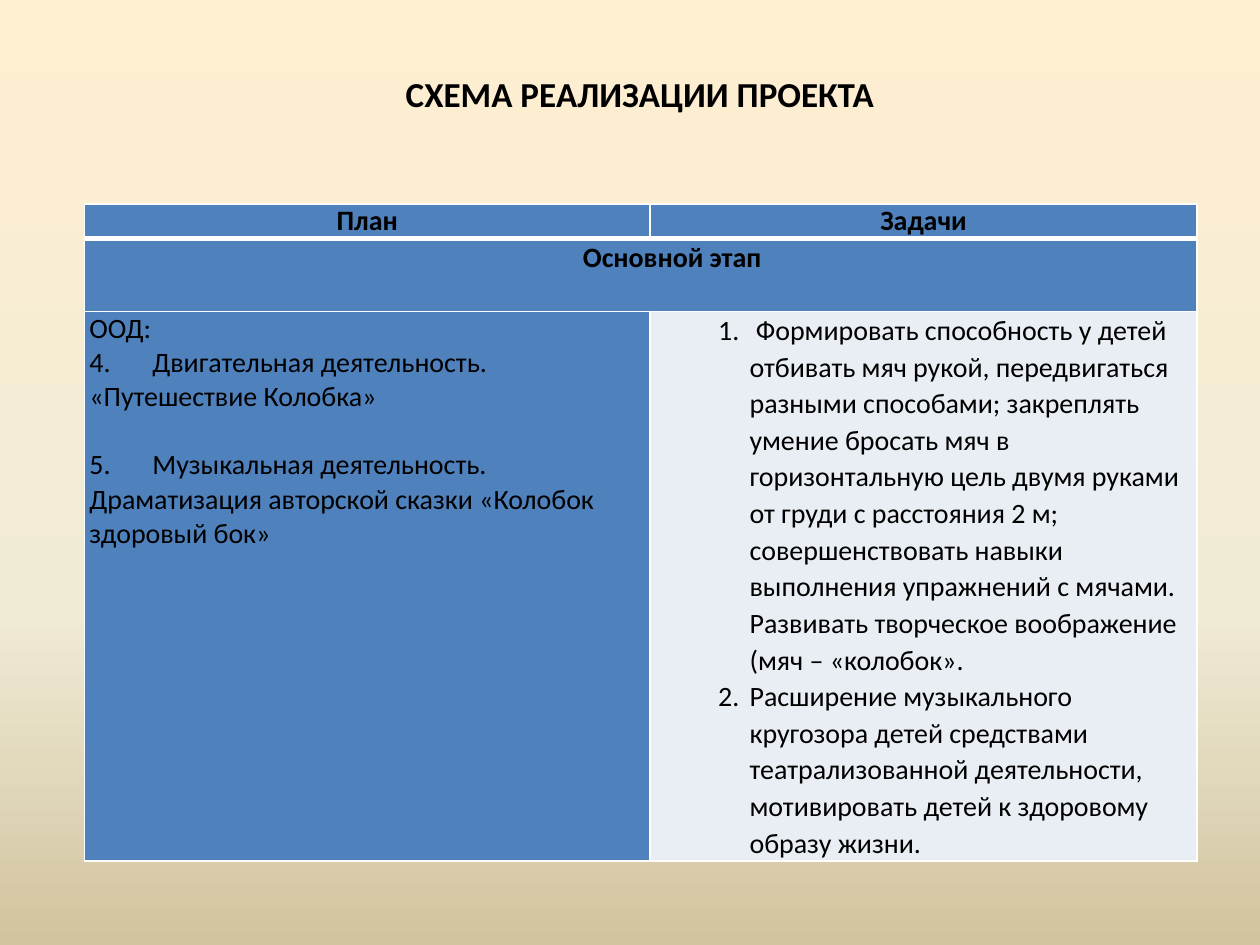
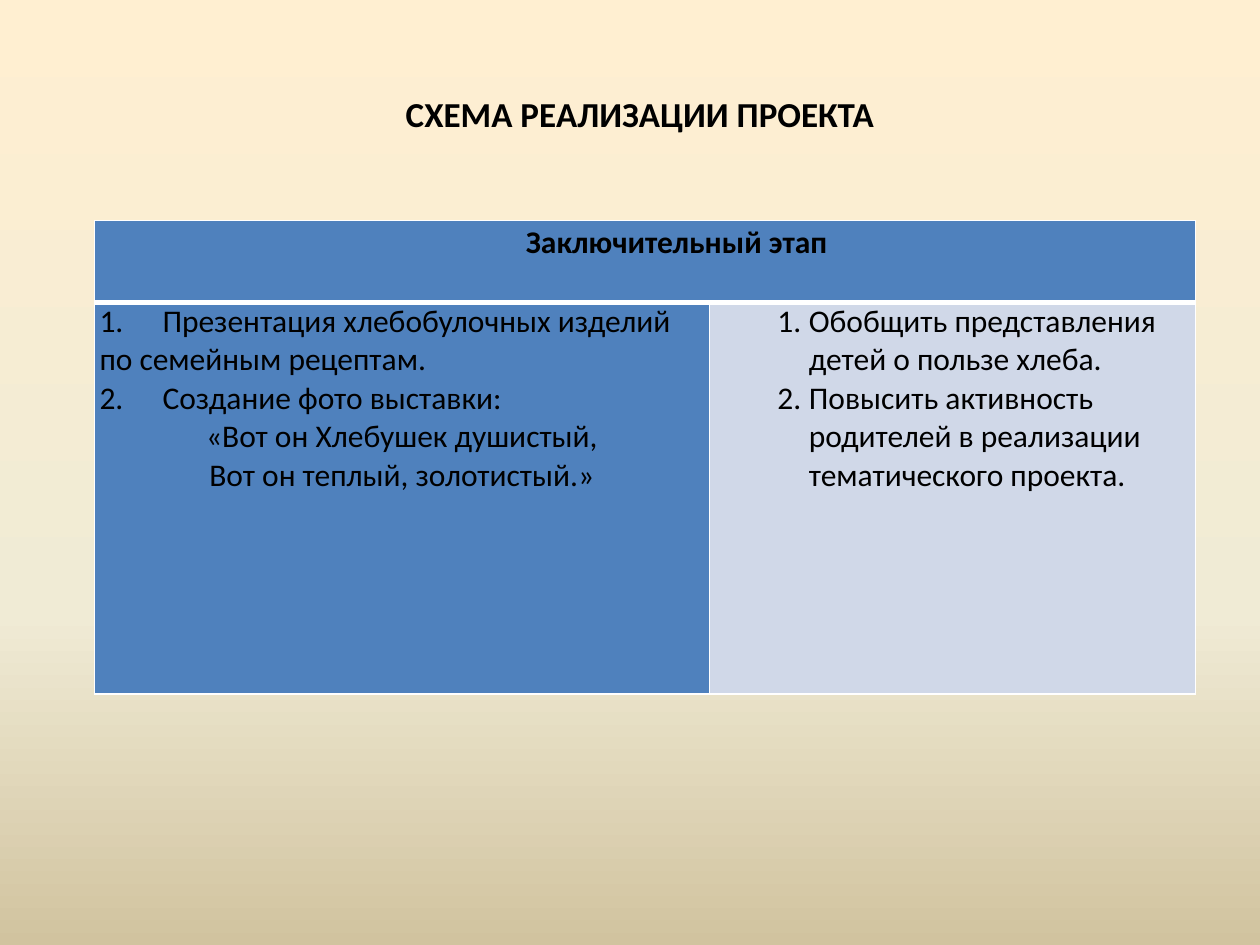
from dataclasses import dataclass

from lxml.etree import SubElement
from pptx import Presentation
from pptx.dml.color import RGBColor as RGB
from pptx.enum.text import MSO_ANCHOR as ANCHOR, PP_ALIGN as ALIGN
from pptx.oxml.ns import qn
from pptx.util import Inches, Pt

W, H = 10, 7.5
FONT = "Calibri"
TITLE = "СХЕМА РЕАЛИЗАЦИИ ПРОЕКТА"
TITLE_SIZE = 20
TITLE_BOX = (0.83, 8.5, 0.44)
COLORS = {"text": "000000", "blue": "4F81BD", "pale": "E9EDF4",
          "band": "D0D8E8", "line": "FFFFFF"}
BACKGROUND = {0: "FFEFD1", 65: "F0EBD5", 100: "D1C39F"}
MARGINS = {"margin_left": Inches(0.04), "margin_right": Inches(0.04),
           "margin_top": 0, "margin_bottom": 0}
THIN, THICK = 1, 3


@dataclass(frozen=True)
class Para:
    text: str
    bold: bool = False
    center: bool = False
    indent: float = 0
    hang: float = 0
    tab: float = 0
    spacing: float | None = None
    before: float | None = None


@dataclass(frozen=True)
class Cell:
    paras: list[Para]
    fill: str = "blue"
    wide: bool = False


@dataclass(frozen=True)
class Page:
    title_top: float
    left: float
    top: float
    cols: list[float]
    rows: list[float]
    size: int
    cells: list[list[Cell]]


def heading(text: str) -> Cell:
    return Cell([Para(text, bold=True, center=True)])


def stage(text: str) -> Cell:
    return Cell([Para(text, bold=True, center=True, indent=0.5, spacing=1.07)], wide=True)


def numbered(text: str, spacing: float | None = None) -> Para:
    return Para(text, indent=0.75, hang=0.25, spacing=spacing)


PAGES = [
    Page(0.52, 0.67, 1.62, [4.49, 4.34], [0.27, 0.58, 4.36], 16, [
        [heading("План"), heading("Задачи")],
        [stage("Основной этап")],
        [Cell([
            Para("ООД:"),
            Para("4.\tДвигательная деятельность. «Путешествие Колобка»", tab=0.31),
            Para("5.\tМузыкальная деятельность. Драматизация авторской сказки "
                 "«Колобок здоровый бок»", tab=0.31, before=19.5),
        ]), Cell([
            numbered(" Формировать способность у детей отбивать мяч рукой, передвигаться "
                     "разными способами; закреплять умение бросать мяч в горизонтальную цель "
                     "двумя руками от груди с расстояния 2 м; совершенствовать навыки "
                     "выполнения упражнений с мячами. Развивать творческое воображение "
                     "(мяч – «колобок».", 1.07),
            numbered("Расширение музыкального кругозора детей средствами театрализованной "
                     "деятельности, мотивировать детей к здоровому образу жизни.", 1.07),
        ], "pale")],
    ]),
    Page(0.68, 0.75, 1.75, [4.88, 3.86], [0.65, 3.11], 18, [
        [stage("Заключительный этап")],
        [Cell([
            Para("1.\tПрезентация хлебобулочных изделий по семейным рецептам.", tab=0.42),
            Para("2.\tСоздание фото выставки:", tab=0.42),
            Para("«Вот он Хлебушек душистый,", center=True),
            Para("Вот он теплый, золотистый.»", center=True),
        ]), Cell([
            numbered("Обобщить представления детей о пользе хлеба."),
            numbered("Повысить активность родителей в реализации тематического проекта."),
        ], "band")],
    ]),
]


def paint_background(s) -> None:
    fill = s.background.fill
    fill.gradient()
    fill.gradient_angle = 270
    stops = s.element.find(".//" + qn("a:gsLst"))
    stops.clear()
    for pos, color in BACKGROUND.items():
        gs = SubElement(stops, qn("a:gs"), pos=str(pos * 1000))
        SubElement(gs, qn("a:srgbClr"), val=color)


def write(tf, paras: list[Para], size: int) -> None:
    for i, para in enumerate(paras):
        p = tf.add_paragraph() if i else tf.paragraphs[0]
        pPr = p._p.get_or_add_pPr()
        pPr.set("marL", str(Inches(para.indent)))
        pPr.set("indent", str(-Inches(para.hang)))
        if para.hang:
            SubElement(pPr, qn("a:buAutoNum"), type="arabicPeriod")
        if para.tab:
            tabs = SubElement(pPr, qn("a:tabLst"))
            SubElement(tabs, qn("a:tab"), pos=str(Inches(para.tab)), algn="l")
        p.alignment = ALIGN.CENTER if para.center else ALIGN.LEFT
        if para.spacing:
            p.line_spacing = para.spacing
        if para.before:
            p.space_before = Pt(para.before)
        r = p.add_run()
        r.text = para.text
        for name, value in {"name": FONT, "size": Pt(size), "bold": para.bold}.items():
            setattr(r.font, name, value)
        r.font.color.rgb = RGB.from_string(COLORS["text"])


def add_borders(cell, row: int) -> None:
    widths = {"L": THIN, "R": THIN, "T": THICK if row == 1 else THIN,
              "B": THICK if row == 0 else THIN}
    tcPr = cell._tc.get_or_add_tcPr()
    for i, (side, width) in enumerate(widths.items()):
        ln = SubElement(tcPr, qn(f"a:ln{side}"), w=str(Pt(width)))
        fill = SubElement(ln, qn("a:solidFill"))
        SubElement(fill, qn("a:srgbClr"), val=COLORS["line"])
        tcPr.insert(i, ln)


def add_title(s, top: float) -> None:
    left, width, height = TITLE_BOX
    tf = s.shapes.add_textbox(*map(Inches, (left, top, width, height))).text_frame
    tf.word_wrap = True
    tf.vertical_anchor = ANCHOR.MIDDLE
    write(tf, [Para(TITLE, bold=True, center=True)], TITLE_SIZE)


def add_plan(s, page: Page) -> None:
    box = (page.left, page.top, sum(page.cols), sum(page.rows))
    table = s.shapes.add_table(len(page.rows), len(page.cols), *map(Inches, box)).table
    table.first_row = table.horz_banding = False
    for col, width in zip(table.columns, page.cols):
        col.width = Inches(width)
    for i, (row, height) in enumerate(zip(table.rows, page.rows)):
        row.height = Inches(height)
        for cell in row.cells:
            cell.fill.solid()
            cell.fill.fore_color.rgb = RGB.from_string(COLORS["blue"])
            add_borders(cell, i)
        for j, item in enumerate(page.cells[i]):
            cell = table.cell(i, j)
            if item.wide:
                cell.merge(table.cell(i, len(page.cols) - 1))
            for name, value in MARGINS.items():
                setattr(cell, name, value)
            cell.fill.fore_color.rgb = RGB.from_string(COLORS[item.fill])
            write(cell.text_frame, item.paras, page.size)


def main() -> None:
    prs = Presentation()
    prs.slide_width, prs.slide_height = Inches(W), Inches(H)
    for page in PAGES:
        s = prs.slides.add_slide(prs.slide_layouts[6])
        paint_background(s)
        add_plan(s, page)
        add_title(s, page.title_top)
    prs.save("out.pptx")


if __name__ == "__main__":
    main()
